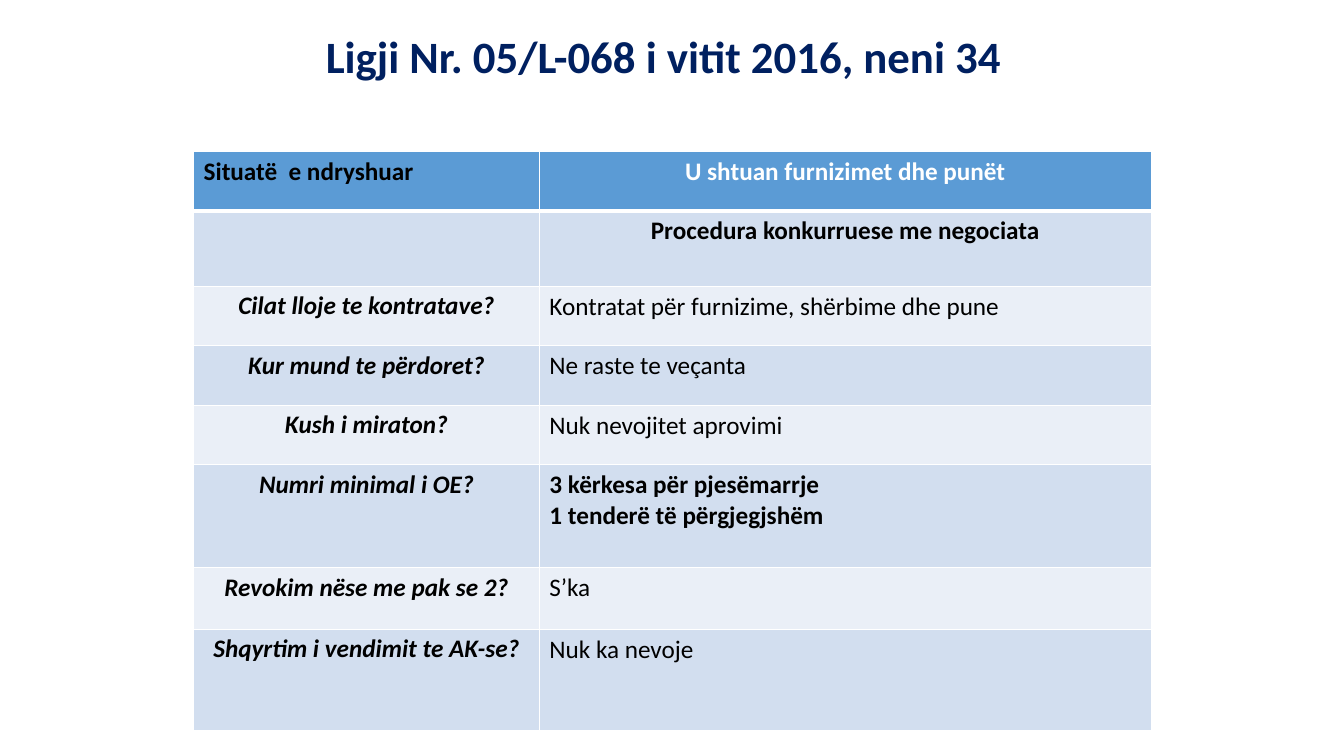
from dataclasses import dataclass

from lxml.etree import SubElement
from pptx import Presentation
from pptx.dml.color import RGBColor as Color
from pptx.enum.text import PP_ALIGN as Align
from pptx.oxml.ns import qn
from pptx.util import Pt


@dataclass(frozen=True)
class Theme:
    font: str = "Calibri"
    navy: str = "002060"
    black: str = "000000"
    white: str = "FFFFFF"
    head: str = "5B9BD5"
    dark: str = "D2DEEF"
    light: str = "EAEFF7"
    big: float = 32
    body: float = 18


@dataclass(frozen=True)
class Style:
    tint: str = Theme.black
    size: float = Theme.body
    bold: bool = True
    slant: bool = False
    align: Align = Align.LEFT
    tight: bool = False


@dataclass(frozen=True)
class Row:
    high: float
    label: str
    value: str
    left: Style
    right: Style


THEME = Theme()
TITLE = Style(THEME.navy, THEME.big, align=Align.CENTER)
STRONG = Style()
PLAIN = Style(bold=False)
MID = Style(align=Align.CENTER)
HEAD = Style(THEME.white, align=Align.CENTER)
ASK = Style(slant=True, align=Align.CENTER, tight=True)

ROWS = [
    Row(42.5, "Situatë  e ndryshuar", "U shtuan furnizimet dhe punët", STRONG, HEAD),
    Row(54, "", "Procedura konkurruese me negociata", STRONG, MID),
    Row(42.5, "Cilat lloje te kontratave?", "Kontratat për furnizime, shërbime dhe pune", ASK, PLAIN),
    Row(42.5, "Kur mund te përdoret?", "Ne raste te veçanta", ASK, PLAIN),
    Row(42.5, "Kush i miraton?", "Nuk nevojitet aprovimi", ASK, PLAIN),
    Row(73.5, "Numri minimal i OE?", "3 kërkesa për pjesëmarrje\n1 tenderë të përgjegjshëm", ASK, STRONG),
    Row(44, "Revokim nëse me pak se 2?", "S’ka", ASK, PLAIN),
    Row(72.7, "Shqyrtim i vendimit te AK-se?", "Nuk ka nevoje", ASK, PLAIN),
]
WIDTHS = (247, 437)


def write(frame, text: str, style: Style) -> None:
    frame.text = text
    for para in frame.paragraphs:
        para.alignment = style.align
        if style.tight:
            para.line_spacing = 1.15
            para.space_before = Pt(12)
        for font in (para.font, *(run.font for run in para.runs)):
            font.name = THEME.font
            font.size = Pt(style.size)
            font.bold = style.bold
            font.italic = style.slant
            font.color.rgb = Color.from_string(style.tint)


def border(cell, top: float, base: float) -> None:
    props = cell._tc.get_or_add_tcPr()
    for side, wide in (("L", 1), ("R", 1), ("T", top), ("B", base)):
        line = SubElement(props, qn(f"a:ln{side}"), w=str(Pt(wide)))
        fill = SubElement(line, qn("a:solidFill"))
        SubElement(fill, qn("a:srgbClr"), val=THEME.white)


def title(slide) -> None:
    box = slide.shapes.add_textbox(Pt(156.2), Pt(17.3), Pt(635.8), Pt(72.7))
    frame = box.text_frame
    frame.word_wrap = True
    write(frame, "Ligji Nr. 05/L-068 i vitit 2016, neni 34", TITLE)
    props = frame.paragraphs[0]._p.get_or_add_pPr()
    props.set("marL", str(Pt(30)))
    props.set("indent", str(-Pt(30)))


def grid(slide) -> None:
    high = sum(row.high for row in ROWS)
    table = slide.shapes.add_table(
        len(ROWS), len(WIDTHS), Pt(138.3), Pt(108), Pt(sum(WIDTHS)), Pt(high)
    ).table
    for col, wide in zip(table.columns, WIDTHS):
        col.width = Pt(wide)
    for num, row in enumerate(ROWS):
        table.rows[num].height = Pt(row.high)
        shade = THEME.head if num == 0 else THEME.dark if num % 2 else THEME.light
        pairs = ((row.label, row.left), (row.value, row.right))
        for cell, (text, style) in zip(table.rows[num].cells, pairs):
            border(cell, 3 if num == 1 else 1, 3 if num == 0 else 1)
            cell.fill.solid()
            cell.fill.fore_color.rgb = Color.from_string(shade)
            if style.tight:
                cell.margin_left = cell.margin_right = Pt(5)
                cell.margin_top = cell.margin_bottom = Pt(0)
            write(cell.text_frame, text, style)


def main() -> None:
    deck = Presentation()
    deck.slide_width, deck.slide_height = Pt(960), Pt(540)
    slide = deck.slides.add_slide(deck.slide_layouts[6])
    title(slide)
    grid(slide)
    deck.save("out.pptx")


if __name__ == "__main__":
    main()
